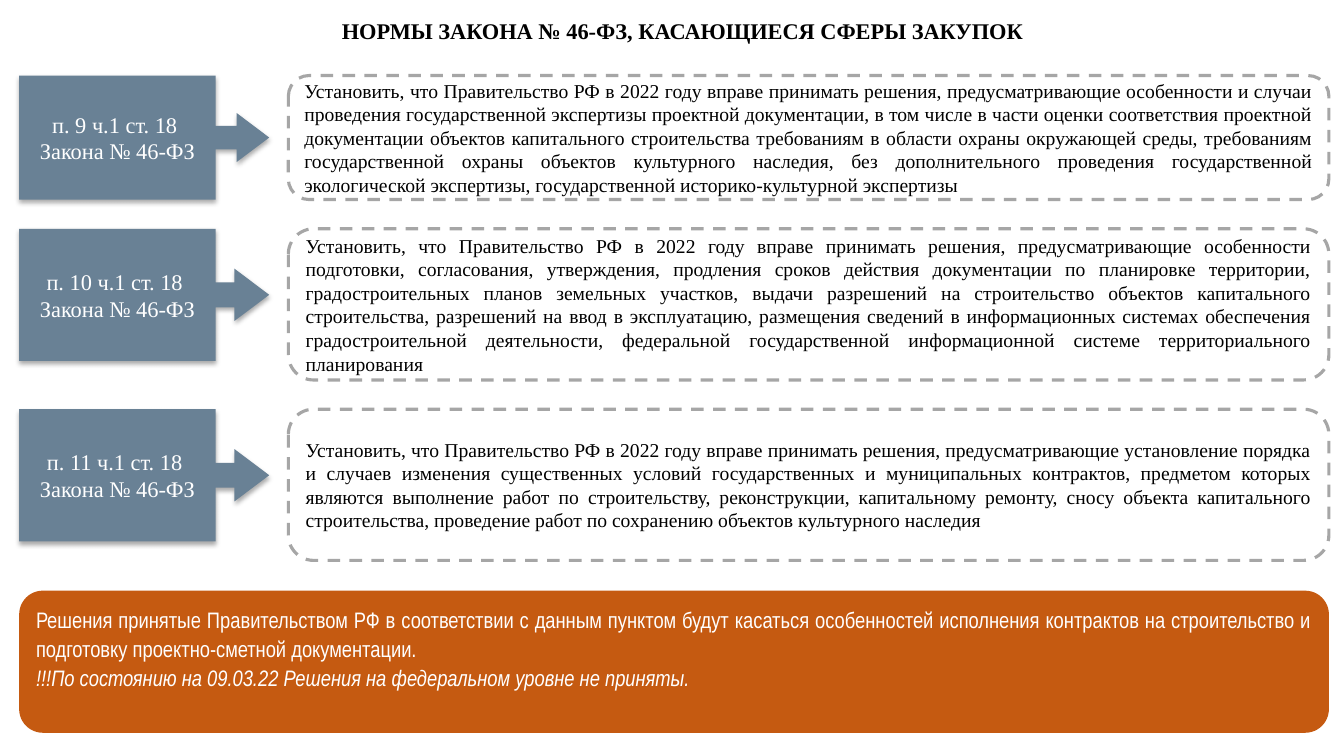
"""Build the slide on the procurement rules of law No. 46-ФЗ."""
from lxml import etree
from pptx import Presentation
from pptx.dml.color import RGBColor as RGB
from pptx.enum.dml import MSO_LINE as DASH
from pptx.enum.shapes import MSO_SHAPE as SHAPE
from pptx.enum.text import MSO_ANCHOR as ANCHOR, PP_ALIGN as ALIGN
from pptx.oxml.ns import qn
from pptx.util import Inches, Pt

THEME = {
    "black": RGB.from_string("000000"),
    "white": RGB.from_string("FFFFFF"),
    "slate": RGB.from_string("698195"),
    "orange": RGB.from_string("C55A11"),
    "gray": RGB.from_string("A6A6A6"),
    "serif": "Times New Roman",
    "narrow": "Arial Narrow",
    "large": Pt(16),
    "body": Pt(14),
}
LEFT, RULE_LEFT, RIGHT = 0.19, 2.86, 13.18
CALLOUT_W = 2.48
CALLOUT_ADJ = (0.189, 0.198, 0.263, 0.786)
RULES = [
    (9, 0.75, 1.23, 1.23,
     "Установить, что Правительство РФ в 2022 году вправе принимать решения, предусматривающие "
     "особенности и случаи проведения государственной экспертизы проектной документации, в том "
     "числе в части оценки соответствия проектной документации объектов капитального строительства "
     "требованиям в области охраны окружающей среды, требованиям государственной охраны объектов "
     "культурного наследия, без дополнительного проведения государственной экологической "
     "экспертизы, государственной историко-культурной экспертизы"),
    (10, 2.27, 1.5, 1.31,
     "Установить, что Правительство РФ в 2022 году вправе принимать решения, предусматривающие "
     "особенности подготовки, согласования, утверждения, продления сроков действия документации по "
     "планировке территории, градостроительных планов земельных участков, выдачи разрешений на "
     "строительство объектов капитального строительства, разрешений на ввод в эксплуатацию, "
     "размещения сведений в информационных системах обеспечения градостроительной деятельности, "
     "федеральной государственной информационной системе территориального планирования"),
    (11, 4.06, 1.5, 1.31,
     "Установить, что Правительство РФ в 2022 году вправе принимать решения, предусматривающие "
     "установление порядка и случаев изменения существенных условий государственных и муниципальных "
     "контрактов, предметом которых являются выполнение работ по строительству, реконструкции, "
     "капитальному ремонту, сносу объекта капитального строительства, проведение работ по "
     "сохранению объектов культурного наследия"),
]
NOTES = [
    "Решения принятые Правительством РФ в соответствии с данным пунктом будут касаться особенностей "
    "исполнения контрактов на строительство и подготовку проектно-сметной документации. ",
    "!!!По состоянию на 09.03.22 Решения на федеральном уровне не приняты.",
]


def add_block(kind, box, fill=None):
    """Add a preset shape without outline or shadow."""
    sp = s.shapes.add_shape(kind, *map(Inches, box))
    sp.shadow.inherit = False
    sp.line.fill.background()
    if fill:
        sp.fill.solid()
        sp.fill.fore_color.rgb = fill
    else:
        sp.fill.background()
    return sp


def write(sp, lines, color, align, anchor=ANCHOR.MIDDLE, spacing=1.0, **font):
    """Fill a shape with one formatted paragraph per line."""
    tf = sp.text_frame
    tf.word_wrap = True
    tf.vertical_anchor = anchor
    for i, line in enumerate(lines):
        p = tf.paragraphs[0] if i == 0 else tf.add_paragraph()
        p.alignment, p.line_spacing = align, spacing
        r = p.add_run()
        r.text = line
        r.font.color.rgb = THEME[color]
        for name, value in font.items():
            setattr(r.font, name, value)


prs = Presentation()
prs.slide_width, prs.slide_height = Inches(13.33), Inches(7.5)
s = prs.slides.add_slide(prs.slide_layouts[6])

title = s.shapes.add_textbox(*map(Inches, (0.36, 0.05, 12.82, 0.44)))
write(title, ["НОРМЫ ЗАКОНА № 46-ФЗ, КАСАЮЩИЕСЯ СФЕРЫ ЗАКУПОК"], "black", ALIGN.CENTER,
      ANCHOR.BOTTOM, 0.9, name=THEME["serif"], size=THEME["large"], bold=True)

for point, top, rule_h, callout_h, text in RULES:
    rule = add_block(SHAPE.ROUNDED_RECTANGLE, (RULE_LEFT, top, RIGHT - RULE_LEFT, rule_h))
    rule.line.color.rgb = THEME["gray"]
    rule.line.width = Pt(2.25)
    rule.line.dash_style = DASH.DASH
    write(rule, [text], "black", ALIGN.JUSTIFY, name=THEME["serif"], size=THEME["body"])

    callout = add_block(SHAPE.RIGHT_ARROW_CALLOUT, (LEFT, top, CALLOUT_W, callout_h), THEME["slate"])
    for i, value in enumerate(CALLOUT_ADJ):
        callout.adjustments[i] = value
    effects = callout._element.spPr.find(qn("a:effectLst"))
    shadow = etree.SubElement(effects, qn("a:outerShdw"), blurRad=str(Pt(3.5)), dist=str(Pt(2.2)),
                              dir="5400000", algn="ctr", rotWithShape="0")
    tint = etree.SubElement(shadow, qn("a:srgbClr"), val=str(THEME["black"]))
    etree.SubElement(tint, qn("a:alpha"), val="32000")
    write(callout, [f"п. {point} ч.1 ст. 18 ", "Закона № 46-ФЗ"], "white", ALIGN.CENTER,
          name=THEME["serif"], size=THEME["large"])

note = add_block(SHAPE.ROUNDED_RECTANGLE, (LEFT, 5.86, RIGHT - LEFT, 1.41), THEME["orange"])
note.text_frame.margin_top = Inches(0.07)
write(note, NOTES, "white", ALIGN.JUSTIFY, ANCHOR.TOP, 1.07,
      name=THEME["narrow"], size=THEME["large"])
note.text_frame.paragraphs[-1].runs[0].font.italic = True

prs.save("out.pptx")
